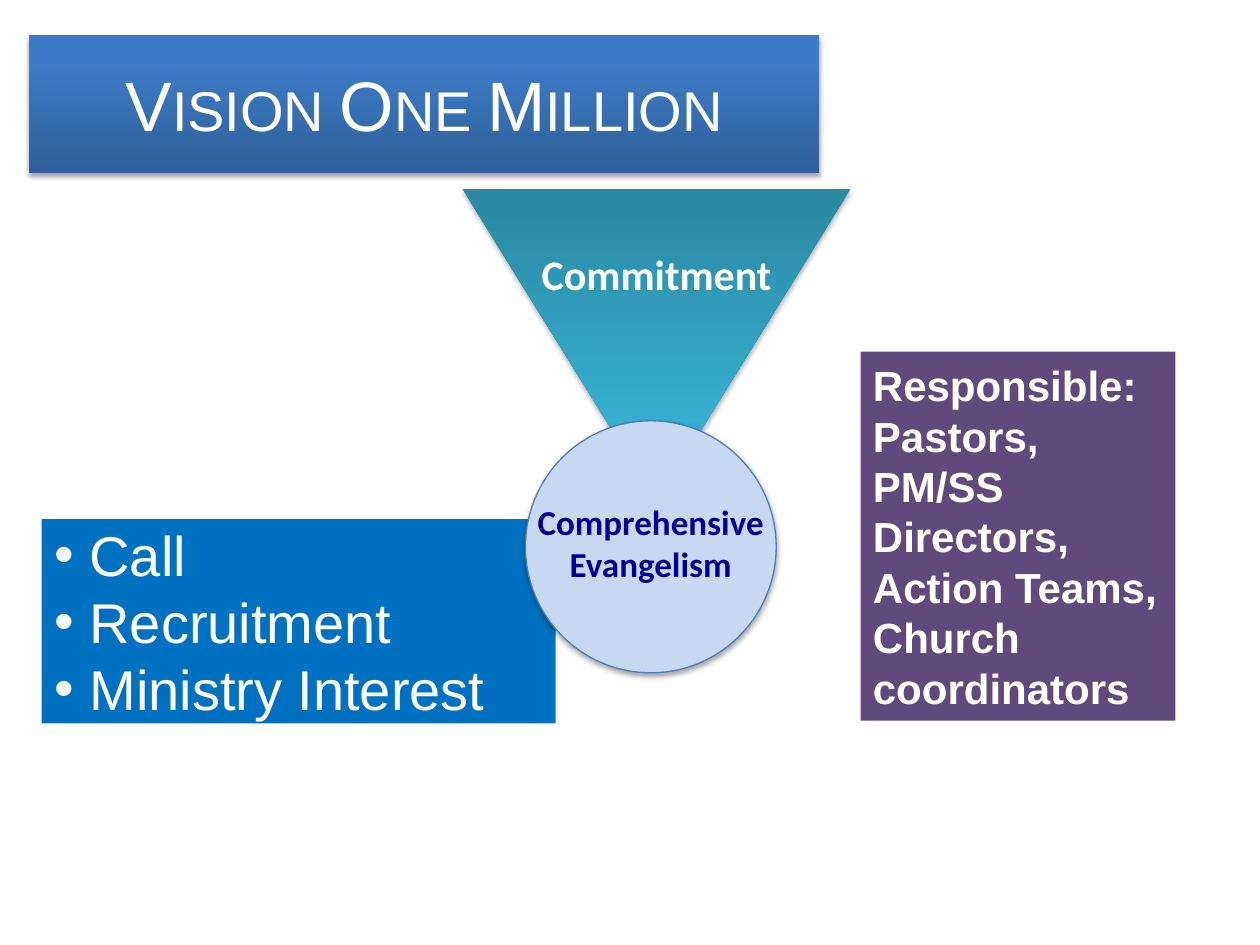
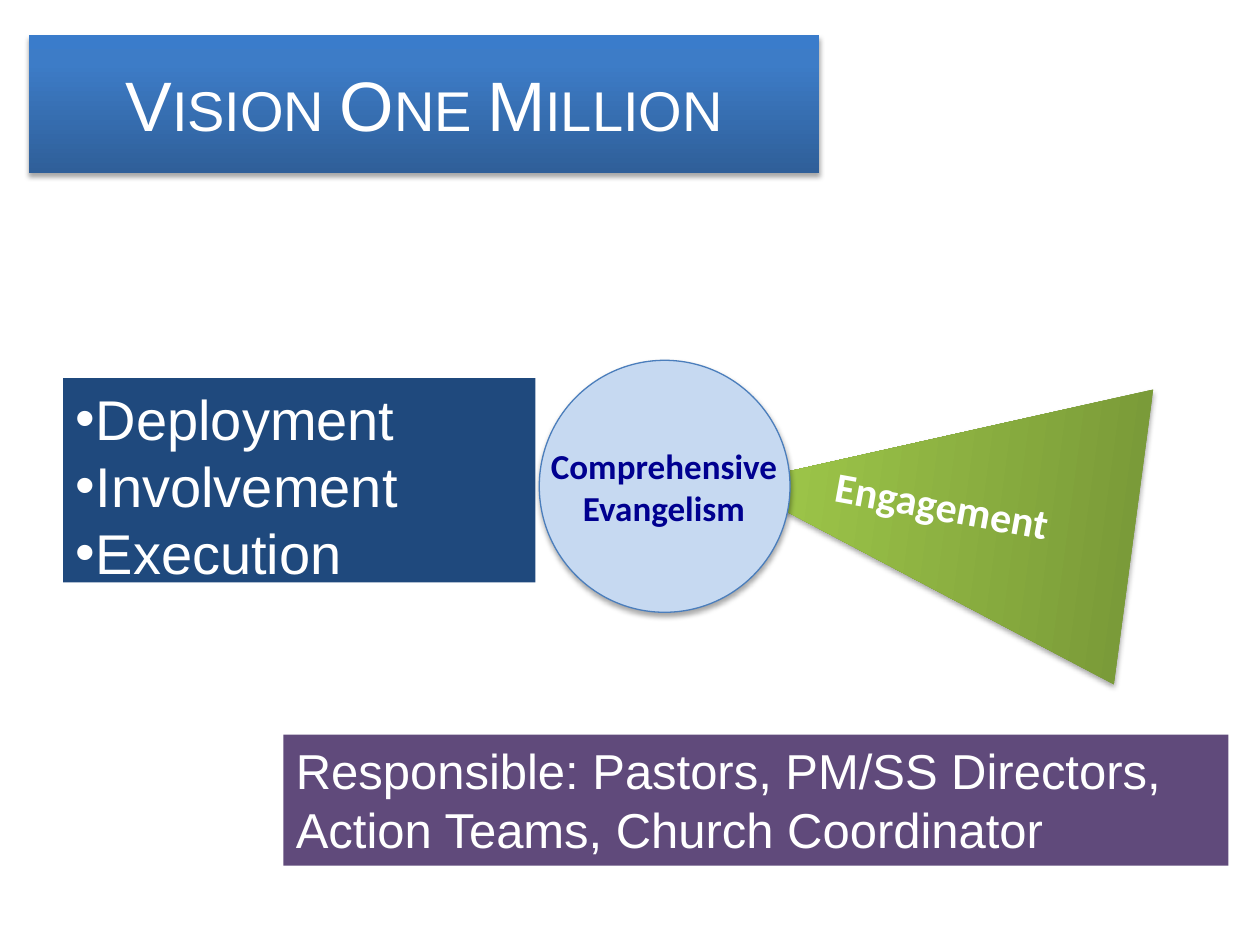
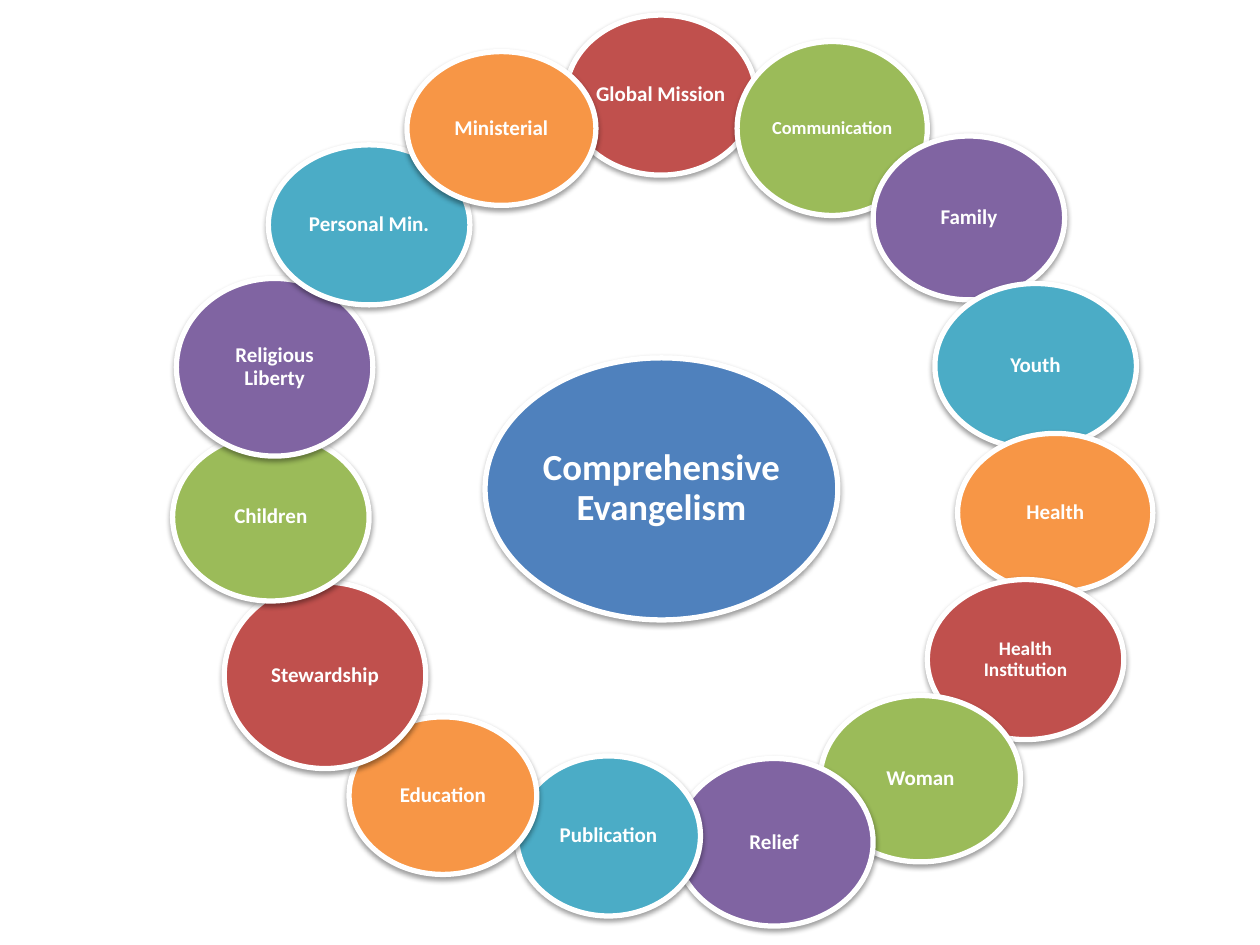
from itertools import cycle
from lxml.etree import SubElement
from pptx import Presentation
from pptx.dml.color import RGBColor
from pptx.enum.shapes import MSO_SHAPE
from pptx.enum.text import MSO_ANCHOR, MSO_AUTO_SIZE, PP_ALIGN
from pptx.oxml.ns import qn
from pptx.util import Inches, Pt

COLORS = {
    "white": "FFFFFF", "black": "000000", "navy": "000090",
    "call": "0070C0", "deploy": "1F497D", "responsible": "604A7B",
    "hub": "C6D9F1", "hub_line": "4B7EBC", "center": "4F81BD",
    "red": "C0504D", "green": "9BBB59", "purple": "8064A2",
    "teal": "4BACC6", "orange": "F79646",
}
# Stops at 0, 80 and 100 percent, running upwards
GRADIENTS = {
    "banner": ("2F5F99", "3D7CC7", "3A7CCB"),
    "commitment": ("2A88A2", "37B1D2", "34B4D6"),
    "engagement": ("779737", "9BC348", "9DC746"),
}
RING_COLORS = ("red", "green", "purple", "teal", "orange")
# Left, top, width, height, label, in clockwise order from the top
MINISTRIES = [
    (4.49, 0.12, 1.51, 1.27, "Global Mission"),
    (5.85, 0.33, 1.51, 1.38, "Communication"),
    (6.93, 1.08, 1.52, 1.3, "Family"),
    (7.42, 2.25, 1.6, 1.31, "Youth"),
    (7.6, 3.44, 1.55, 1.26, "Health"),
    (7.36, 4.6, 1.56, 1.27, "Health Institution"),
    (6.51, 5.52, 1.59, 1.32, "Woman"),
    (5.36, 6.02, 1.57, 1.33, "Relief"),
    (4.1, 6, 1.46, 1.27, "Publication"),
    (2.77, 5.69, 1.49, 1.25, "Education"),
    (1.78, 4.62, 1.6, 1.48, "Stewardship"),
    (1.37, 3.44, 1.56, 1.33, "Children"),
    (1.4, 2.21, 1.56, 1.41, "Religious Liberty"),
    (2.13, 1.15, 1.6, 1.27, "Personal Min."),
    (3.23, 0.41, 1.5, 1.22, "Ministerial"),
]
LABEL_SIZES = {"Communication": 10.5, "Health Institution": 11}


def rgb(name):
    return RGBColor.from_string(COLORS[name])


def place(sp, left, top, width, height):
    sp.left, sp.top = Inches(left), Inches(top)
    sp.width, sp.height = Inches(width), Inches(height)


def write(sp, text, size, font="Arial", color="white", bold=False,
          align=PP_ALIGN.LEFT, anchor=MSO_ANCHOR.TOP, wrap=True, grow=False,
          small_caps=False, spacing=None, margin=None, hanging=None):
    """Fill a shape with one paragraph per line of text."""
    tf = sp.text_frame
    tf.word_wrap, tf.vertical_anchor = wrap, anchor
    tf.auto_size = MSO_AUTO_SIZE.SHAPE_TO_FIT_TEXT if grow else MSO_AUTO_SIZE.NONE
    if margin is not None:
        tf.margin_left = tf.margin_right = Inches(margin)
        tf.margin_top = tf.margin_bottom = Inches(margin)
    for i, line in enumerate(text.split("\n")):
        p = tf.paragraphs[0] if i == 0 else tf.add_paragraph()
        p.alignment, p.space_before = align, Pt(0)
        if spacing:
            p.line_spacing = spacing
        if hanging:
            pPr = p._p.get_or_add_pPr()
            pPr.set("marL", str(Inches(hanging)))
            pPr.set("indent", str(-Inches(hanging)))
            SubElement(pPr, qn("a:buFont"), typeface="Arial")
            SubElement(pPr, qn("a:buChar"), char="•")
        r = p.add_run()
        r.text = line
        r.font.name, r.font.size, r.font.bold = font, Pt(size), bold
        r.font.color.rgb = rgb(color)
        if small_caps:
            r._r.get_or_add_rPr().set("cap", "small")


def add_shadow(sp, alpha=35, distance=1.8):
    sp.shadow.inherit = False
    effects = sp._element.spPr.find(qn("a:effectLst"))
    shadow = SubElement(effects, qn("a:outerShdw"), blurRad=str(Pt(3.1)),
                        dist=str(Pt(distance)), dir="5400000", rotWithShape="0")
    clr = SubElement(shadow, qn("a:srgbClr"), val=COLORS["black"])
    SubElement(clr, qn("a:alpha"), val=str(alpha * 1000))


def fill_gradient(sp, name):
    sp.fill.gradient()
    sp.fill.gradient_angle = 90
    stops = sp._element.spPr.find(".//" + qn("a:gsLst"))
    for stop in list(stops):
        stops.remove(stop)
    for pos, color in zip((0, 80, 100), GRADIENTS[name]):
        stop = SubElement(stops, qn("a:gs"), pos=str(pos * 1000))
        SubElement(stop, qn("a:srgbClr"), val=color)


def add_shape(s, kind, at, fill, line=None, line_width=0.75):
    sp = s.shapes.add_shape(kind, *map(Inches, at))
    sp.shadow.inherit = False
    if fill in GRADIENTS:
        fill_gradient(sp, fill)
    else:
        sp.fill.solid()
        sp.fill.fore_color.rgb = rgb(fill)
    if line:
        sp.line.color.rgb = rgb(line)
        sp.line.width = Pt(line_width)
    else:
        sp.line.fill.background()
    return sp


def add_text(s, at, text, size, **fmt):
    sp = s.shapes.add_textbox(*map(Inches, at))
    write(sp, text, size, **fmt)
    return sp


def add_banner(s, text):
    """Turn the title placeholder into the snipped gradient banner."""
    sp = s.shapes.title
    place(sp, 0.23, 0.28, 6.27, 1.09)
    geom = SubElement(sp._element.spPr, qn("a:prstGeom"), prst="snip2DiagRect")
    SubElement(geom, qn("a:avLst"))
    fill_gradient(sp, "banner")
    add_shadow(sp)
    write(sp, text, 40, align=PP_ALIGN.CENTER, anchor=MSO_ANCHOR.MIDDLE,
          small_caps=True)


def add_list(s, at, fill, text, hanging, anchor):
    sp = s.placeholders[1]
    place(sp, *at)
    sp.fill.solid()
    sp.fill.fore_color.rgb = rgb(fill)
    write(sp, text, 32, hanging=hanging, anchor=anchor, grow=True)


def add_triangle(s, at, fill, rotation):
    sp = add_shape(s, MSO_SHAPE.ISOSCELES_TRIANGLE, at, fill)
    sp.rotation = rotation
    add_shadow(sp)


def add_hub(s, left, top, label_at):
    sp = add_shape(s, MSO_SHAPE.OVAL, (left, top, 1.99, 2), "hub", "hub_line")
    add_shadow(sp)
    add_text(s, label_at, "Comprehensive Evangelism", 20, font="Calibri",
             color="navy", bold=True, align=PP_ALIGN.CENTER, grow=True)


def add_responsible(s, at, text, size, **fmt):
    sp = add_shape(s, MSO_SHAPE.RECTANGLE, at, "responsible")
    write(sp, text, size, grow=True, **fmt)


def add_bubble(s, at, fill, text, size):
    sp = add_shape(s, MSO_SHAPE.OVAL, at, fill, "white", 3)
    add_shadow(sp, alpha=38, distance=1.6)
    write(sp, text, size, font="Calibri", bold=True, align=PP_ALIGN.CENTER,
          anchor=MSO_ANCHOR.MIDDLE, spacing=0.9, margin=0)


def commitment_slide(prs):
    s = prs.slides.add_slide(prs.slide_layouts[1])
    add_banner(s, "Vision One Million")
    add_list(s, (0.33, 4.07, 4.08, 1.72), "call",
             "Call\nRecruitment\nMinistry Interest", 0.28, MSO_ANCHOR.MIDDLE)
    add_triangle(s, (3.67, 1.5, 3.08, 2.48), "commitment", 180)
    add_hub(s, 4.17, 3.34, (4.08, 3.92, 2.17, 0.77))
    add_text(s, (4.2, 1.92, 2.05, 0.5), "Commitment", 24, font="Calibri",
             bold=True, wrap=False, grow=True)
    add_responsible(s, (6.83, 2.79, 2.5, 2.93),
                    "Responsible: Pastors, PM/SS Directors, Action Teams, "
                    "Church coordinators", 24, bold=True,
                    anchor=MSO_ANCHOR.MIDDLE)


def engagement_slide(prs):
    s = prs.slides.add_slide(prs.slide_layouts[1])
    add_banner(s, "Vision One Million")
    add_list(s, (0.5, 3, 3.75, 1.72), "deploy",
             "Deployment\nInvolvement\nExecution", 0.16, MSO_ANCHOR.TOP)
    add_triangle(s, (6.23, 2.45, 2.36, 3.2), "engagement", 277.6)
    label = add_text(s, (6.44, 3.78, 2.34, 0.5), "Engagement", 24,
                     font="Calibri", bold=True, grow=True)
    label.text_frame.margin_left = Inches(0.18)
    label.rotation = 10.3
    add_responsible(s, (2.25, 5.83, 7.5, 1.04),
                    "Responsible: Pastors, PM/SS Directors, Action Teams, "
                    "Church Coordinator", 28)
    add_hub(s, 4.28, 2.86, (4.06, 3.48, 2.42, 0.77))


def ministries_slide(prs):
    s = prs.slides.add_slide(prs.slide_layouts[6])
    add_bubble(s, (3.85, 2.84, 2.8, 2.08), "center",
               "Comprehensive Evangelism", 21)
    for (*at, label), color in zip(MINISTRIES, cycle(RING_COLORS)):
        add_bubble(s, at, color, label, LABEL_SIZES.get(label, 12))


def main():
    prs = Presentation()
    prs.slide_width, prs.slide_height = Inches(10), Inches(7.5)
    commitment_slide(prs)
    engagement_slide(prs)
    ministries_slide(prs)
    prs.save("out.pptx")


if __name__ == "__main__":
    main()
